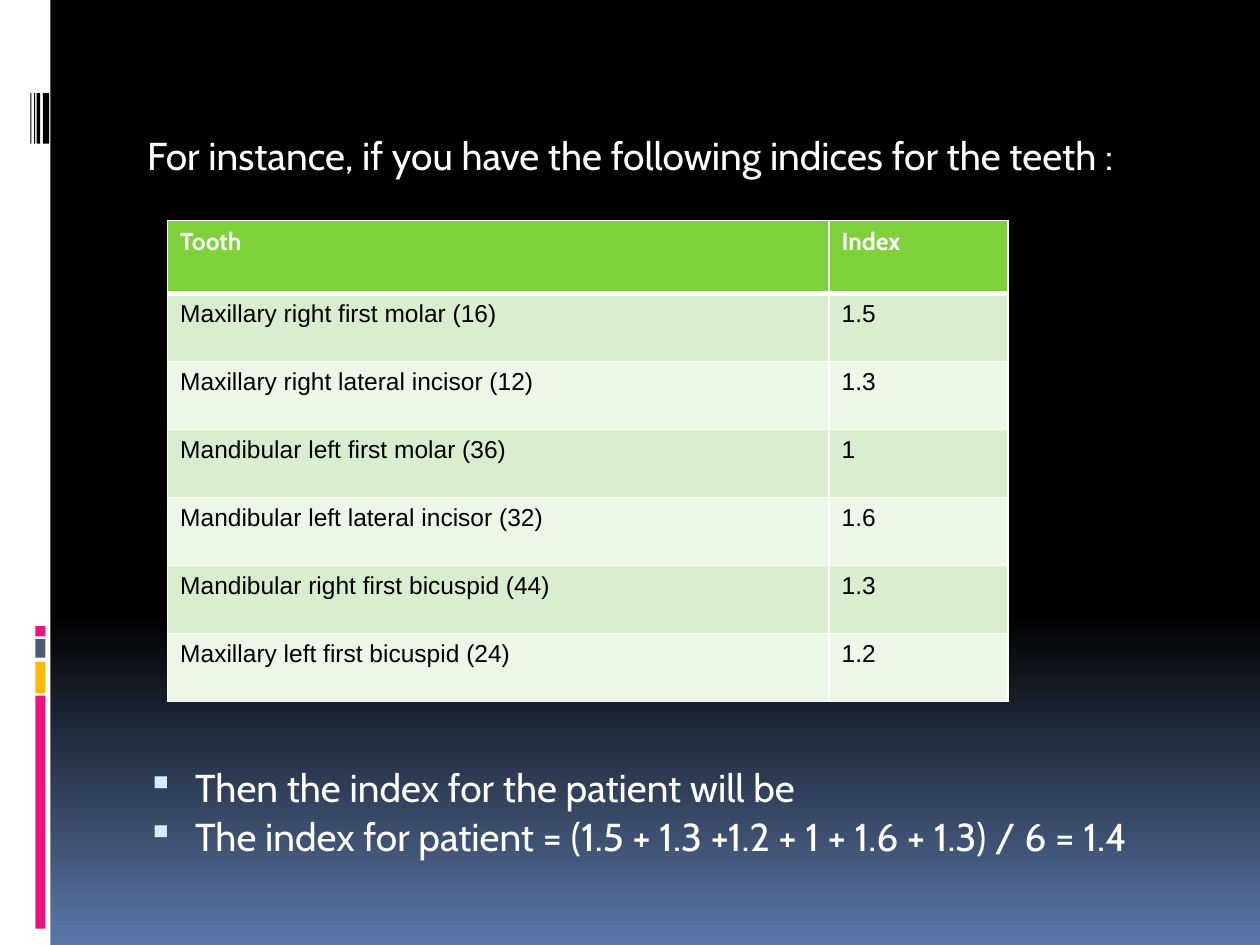
from dataclasses import dataclass
from lxml.etree import SubElement as Sub
from pptx import Presentation
from pptx.dml.color import RGBColor
from pptx.enum.shapes import MSO_SHAPE as Shape
from pptx.oxml.ns import qn
from pptx.util import Inches, Pt


@dataclass(frozen=True)
class Theme:
    white: str = "FFFFFF"
    black: str = "000000"
    blue: str = "5B77A8"
    pink: str = "EA157A"
    gold: str = "FEB80A"
    slate: str = "4E5B6F"
    green: str = "7FD13B"
    bands: tuple = ("D8EECE", "ECF7E8")
    bullet: str = "D6ECFF"
    head: str = "Cabin"
    body: str = "Arial"
    text: float = 22.2
    cell: float = 14


T = Theme()
WIDE, HIGH = 10, 7.5

INTRO = "For instance, if you have the following indices for the teeth :"
POINTS = [
    "Then the index for the patient will be",
    "The index for patient = (1.5 + 1.3 +1.2 + 1 + 1.6 + 1.3) / 6 = 1.4",
]
TEETH = [
    ("Tooth", "Index"),
    ("Maxillary right first molar (16)", "1.5"),
    ("Maxillary right lateral incisor (12)", "1.3"),
    ("Mandibular left first molar (36)", "1"),
    ("Mandibular left lateral incisor (32)", "1.6"),
    ("Mandibular right first bicuspid (44)", "1.3"),
    ("Maxillary left first bicuspid (24)", "1.2"),
]
COLS = (5.25, 1.42)
HEAD_ROW, ROW = 0.58, 0.54

BLOCKS = [(4.97, 0.08, T.pink), (5.07, 0.15, T.slate),
          (5.25, 0.25, T.gold), (5.52, 1.85, T.pink)]  # top, height, colour
CODE = [(0.24, 0.01), (0.27, 0.01), (0.29, 0.03), (0.34, 0.05)]  # left, width


def rgb(color):
    return RGBColor.from_string(color)


def bar(slide, left, top, width, height, color):
    box = slide.shapes.add_shape(
        Shape.RECTANGLE, *map(Inches, (left, top, width, height)))
    box.shadow.inherit = False
    box.fill.solid()
    box.fill.fore_color.rgb = rgb(color)
    box.line.fill.background()


def style(para, face, size, color, bold=False):
    font = para.font
    font.name, font.size, font.bold = face, Pt(size), bold
    font.color.rgb = rgb(color)


def backdrop(slide):
    fill = slide.background.fill
    fill.gradient()
    fill.gradient_angle = 270
    for stop, (place, color) in zip(fill.gradient_stops,
                                    [(0.65, T.black), (1, T.blue)]):
        stop.position = place
        stop.color.rgb = rgb(color)


def hang(para, mark):
    """Set the hanging indent, with a square bullet if mark is true."""
    props = para._p.get_or_add_pPr()
    props.set("marL", str(Inches(0.45)))
    props.set("indent", str(Inches(-0.38)))
    if mark:
        tint = Sub(Sub(props, qn("a:buClr")), qn("a:srgbClr"))
        tint.set("val", T.bullet)
        Sub(props, qn("a:buSzPct")).set("val", "95000")
        Sub(props, qn("a:buChar")).set("char", "▪")
    else:
        Sub(props, qn("a:buNone"))


def prose(slide):
    frame = slide.shapes.add_textbox(
        *map(Inches, (1, 0.58, 9, 6.7))).text_frame
    frame.word_wrap = True
    frame.margin_top = Inches(0.54)
    gaps = (0, 339.5, 7)  # the second gap leaves room for the table
    for n, (text, gap) in enumerate(zip([INTRO, *POINTS], gaps)):
        para = frame.add_paragraph() if n else frame.paragraphs[0]
        para.text = text
        para.line_spacing = 0.8
        para.space_before = Pt(gap)
        hang(para, n > 0)
        style(para, T.head, T.text, T.white)


def edge(cell, head):
    props = cell._tc.get_or_add_tcPr()
    for n, side in enumerate(("lnL", "lnR", "lnT", "lnB")):
        line = props.makeelement(qn(f"a:{side}"), {})
        line.set("w", str(Pt(3 if head and side == "lnB" else 1)))
        Sub(Sub(line, qn("a:solidFill")), qn("a:srgbClr")).set("val", T.white)
        props.insert(n, line)


def grid(slide):
    high = HEAD_ROW + ROW * (len(TEETH) - 1)
    table = slide.shapes.add_table(
        len(TEETH), len(COLS),
        *map(Inches, (1.33, 1.75, sum(COLS), high))).table
    for col, width in zip(table.columns, COLS):
        col.width = Inches(width)
    for r, values in enumerate(TEETH):
        head = r == 0
        table.rows[r].height = Inches(HEAD_ROW if head else ROW)
        for c, value in enumerate(values):
            cell = table.cell(r, c)
            cell.text = value
            cell.fill.solid()
            cell.fill.fore_color.rgb = rgb(
                T.green if head else T.bands[(r - 1) % 2])
            style(cell.text_frame.paragraphs[0], T.head if head else T.body,
                  T.cell, T.white if head else T.black, head)
            edge(cell, head)


def main():
    deck = Presentation()
    deck.slide_width, deck.slide_height = Inches(WIDE), Inches(HIGH)
    slide = deck.slides.add_slide(deck.slide_layouts[6])
    backdrop(slide)
    bar(slide, 0, 0, 0.4, HIGH, T.white)
    for top, height, color in BLOCKS:
        bar(slide, 0.28, top, 0.08, height, color)
    for left, width in CODE:
        bar(slide, left, 0.74, width, 0.4, T.black)
    prose(slide)
    grid(slide)
    deck.save("out.pptx")


if __name__ == "__main__":
    main()
